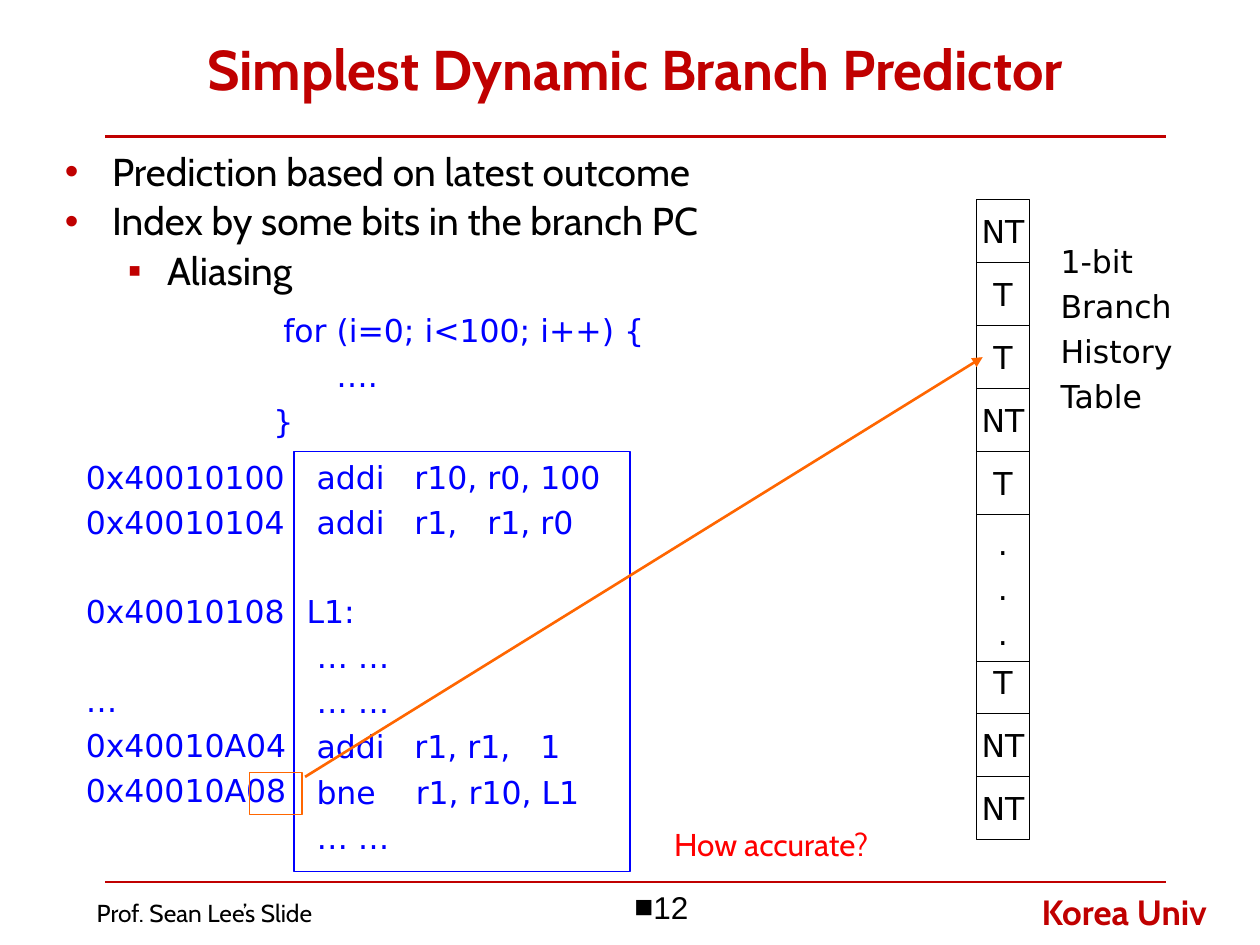
import pptx
import pptx.dml.color
import pptx.enum.shapes
import pptx.enum.text
import pptx.oxml
import pptx.oxml.ns
import pptx.util
import lxml.etree

Cm = pptx.util.Cm
Pt = pptx.util.Pt
RGBColor = pptx.dml.color.RGBColor
ALIGN = pptx.enum.text.PP_ALIGN
ANCHOR = pptx.enum.text.MSO_ANCHOR
RECTANGLE = pptx.enum.shapes.MSO_SHAPE.RECTANGLE
STRAIGHT = pptx.enum.shapes.MSO_CONNECTOR.STRAIGHT
qn = pptx.oxml.ns.qn

CRIMSON = RGBColor(0xC0, 0x00, 0x00)
RED = RGBColor(0xFF, 0x00, 0x00)
BLUE = RGBColor(0x00, 0x00, 0xFF)
ORANGE = RGBColor(0xFF, 0x66, 0x00)
BLACK = RGBColor(0x00, 0x00, 0x00)
WHITE = RGBColor(0xFF, 0xFF, 0xFF)


class SlideBuilder:
    heading_font = "Cabin"
    code_font = "DejaVu Sans"
    code_size = 18
    code_gap = 4.2
    blank_line = 25.2

    def __init__(self, slide):
        self.slide = slide

    def set_lines(self, shape, lines, font=code_font, size=code_size, color=BLACK,
                  bold=False, align=ALIGN.LEFT, anchor=ANCHOR.TOP, wrap=True):
        frame = shape.text_frame
        frame.word_wrap = wrap
        frame.vertical_anchor = anchor
        gap = 0
        for index, line in enumerate(lines):
            if not line:
                gap += self.blank_line
                continue
            paragraph = frame.add_paragraph() if index else frame.paragraphs[0]
            paragraph.text = line
            paragraph.alignment = align
            paragraph.space_before = Pt(gap)
            gap = self.code_gap
            paragraph.font.name = font
            paragraph.font.size = Pt(size)
            paragraph.font.bold = bold
            paragraph.font.color.rgb = color

    def text(self, left, top, width, height, lines, **style):
        shape = self.slide.shapes.add_textbox(Cm(left), Cm(top), Cm(width), Cm(height))
        self.set_lines(shape, lines, **style)
        return shape

    def box(self, left, top, width, height, line, fill=None):
        shape = self.slide.shapes.add_shape(
            RECTANGLE, Cm(left), Cm(top), Cm(width), Cm(height))
        shape.shadow.inherit = False
        if fill is None:
            shape.fill.background()
        else:
            shape.fill.solid()
            shape.fill.fore_color.rgb = fill
        shape.line.color.rgb = line
        shape.line.width = Pt(0.75)
        return shape

    def cell(self, left, top, width, height, lines):
        shape = self.box(left, top, width, height, BLACK, WHITE)
        shape.text_frame.margin_left = shape.text_frame.margin_right = 0
        self.set_lines(shape, lines, align=ALIGN.CENTER, anchor=ANCHOR.MIDDLE,
                       wrap=False)

    def line(self, x1, y1, x2, y2, color, arrow=False):
        connector = self.slide.shapes.add_connector(
            STRAIGHT, Cm(x1), Cm(y1), Cm(x2), Cm(y2))
        connector.line.color.rgb = color
        connector.line.width = Pt(1.5)
        properties = connector._element.spPr
        if arrow:
            outline = properties.find(qn("a:ln"))
            lxml.etree.SubElement(outline, qn("a:tailEnd"), type="triangle")
        lxml.etree.SubElement(properties, qn("a:effectLst"))

    def bullet(self, paragraph, mark, color, margin=0, hanging=0):
        properties = paragraph._p.get_or_add_pPr()
        properties.set("marL", str(Cm(margin)))
        properties.set("indent", str(-Cm(hanging)))
        bullet_color = lxml.etree.Element(qn("a:buClr"))
        lxml.etree.SubElement(bullet_color, qn("a:srgbClr"), val=str(color))
        bullet_font = lxml.etree.Element(qn("a:buFont"), typeface="Arial")
        bullet_mark = lxml.etree.Element(qn("a:buChar"), char=mark)
        following = properties.find(qn("a:defRPr"))
        for element in (bullet_color, bullet_font, bullet_mark):
            if following is None:
                properties.append(element)
            else:
                following.addprevious(element)

    def outline(self, left, top, width, height, items):
        shape = self.text(left, top, width, height, [item for item, _ in items],
                          font=self.heading_font, size=22.2)
        levels = (("•", 0.95, 0.95), ("▪", 2.06, 0.79))
        for paragraph, (_, level) in zip(shape.text_frame.paragraphs, items):
            mark, margin, hanging = levels[level]
            paragraph.level = level
            paragraph.line_spacing = 0.9
            self.bullet(paragraph, mark, CRIMSON, margin, hanging)


def main():
    presentation = pptx.Presentation()
    presentation.slide_width = Cm(25.4)
    presentation.slide_height = Cm(19.05)
    builder = SlideBuilder(presentation.slides.add_slide(presentation.slide_layouts[6]))
    heading = builder.heading_font

    for rule_top in (2.75, 17.78):
        builder.line(2.12, rule_top, 23.5, rule_top, CRIMSON)
    builder.text(20.75, 17.83, 4.42, 1.12, ["Korea Univ"], font=heading, size=20,
                 color=CRIMSON, bold=True, wrap=False)
    number = builder.text(9.31, 17.78, 8.05, 1.27, ["12"], font="Arial",
                          align=ALIGN.CENTER)
    builder.bullet(number.text_frame.paragraphs[0], "■", BLACK)

    builder.text(2.12, 0.2, 21.38, 2.34, ["Simplest Dynamic Branch Predictor"],
                 font=heading, size=32, color=CRIMSON, bold=True,
                 align=ALIGN.CENTER, anchor=ANCHOR.MIDDLE)
    builder.outline(1.06, 2.96, 15.03, 3.39, [
        ("Prediction based on latest outcome", 0),
        ("Index by some bits in the branch PC", 0),
        ("Aliasing", 1),
    ])

    table_left, cell_width, cell_height = 19.69, 1.06, 1.27
    for first_top, outcomes in ((4.02, ["NT", "T", "T", "NT", "T"]),
                                (13.12, ["T", "NT", "NT"])):
        for row, outcome in enumerate(outcomes):
            builder.cell(table_left, first_top + row * cell_height,
                         cell_width, cell_height, [outcome])
    builder.cell(table_left, 10.37, cell_width, 2.96, ["."] * 3)

    builder.text(5.26, 6.15, 8.31, 3.78,
                 [" for (i=0; i<100; i++) {", "\t….", "}"], color=BLUE)
    assembly = builder.box(5.93, 9.1, 6.77, 8.47, BLUE)
    builder.set_lines(assembly, [
        " addi   r10, r0, 100",
        " addi   r1,   r1, r0",
        "",
        "L1:",
        " … …",
        " … …",
        " addi   r1, r1,   1",
        " bne    r1, r10, L1",
        " … …",
    ], color=BLUE)
    builder.text(1.48, 9.1, 4.87, 7.49, [
        "0x40010100", "0x40010104", "", "0x40010108",
        "", "…", "0x40010A04", "0x40010A08",
    ], color=BLUE)

    builder.box(5.03, 15.57, 1.06, 0.85, ORANGE)
    builder.line(6.15, 15.66, 19.81, 7.2, ORANGE, arrow=True)

    builder.text(13.34, 16.51, 4.67, 1.02, ["How accurate?"], font=heading,
                 color=RED, wrap=False)
    builder.text(21.13, 4.75, 3.02, 3.78, ["1-bit", "Branch", "History", "Table"],
                 wrap=False)
    builder.text(1.7, 17.98, 5.18, 0.86, ["Prof. Sean Lee’s Slide"], font=heading,
                 size=14, wrap=False)

    presentation.save("out.pptx")


if __name__ == "__main__":
    main()
